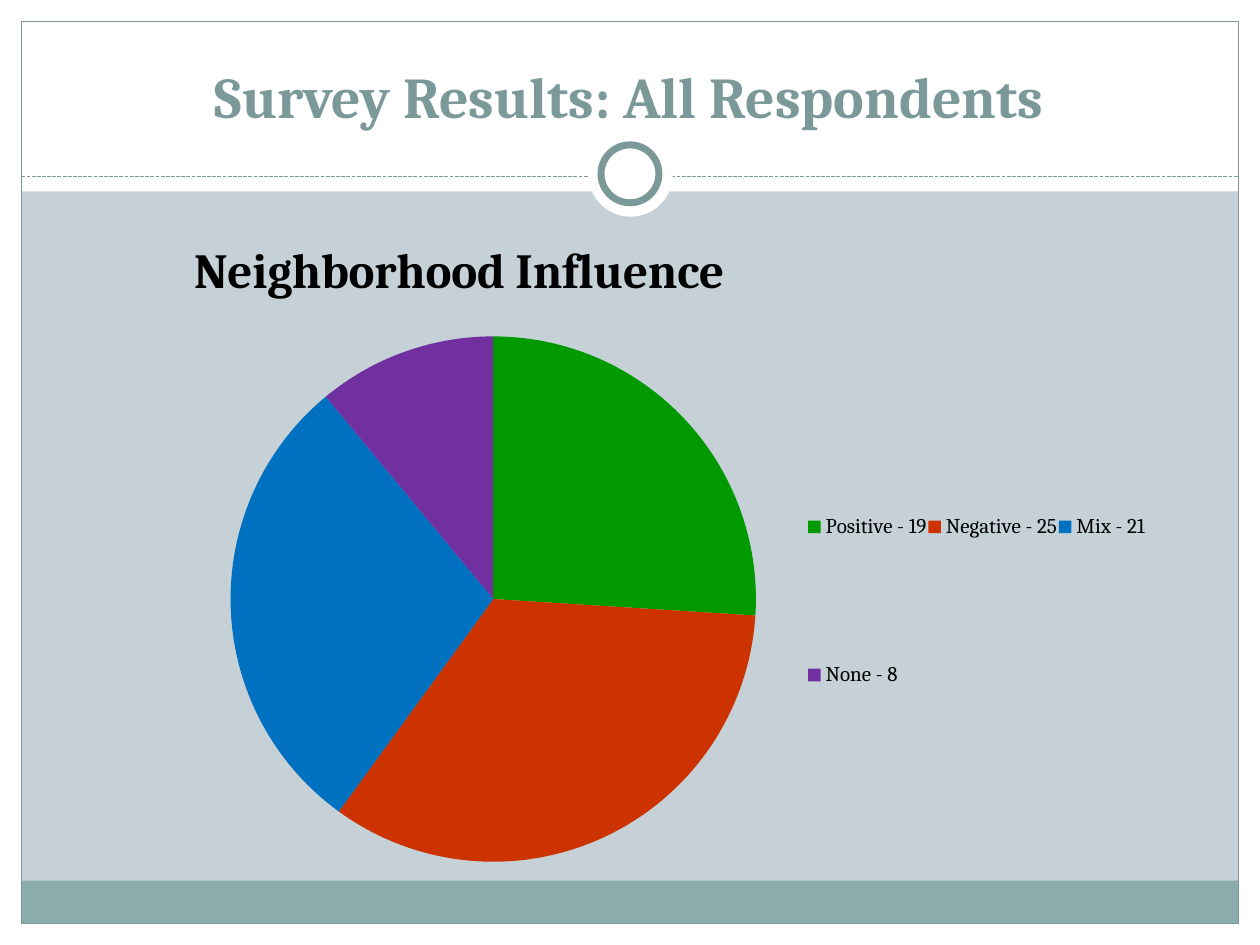
from lxml import etree
from pptx import Presentation, util as u
from pptx.chart.data import CategoryChartData
from pptx.dml.color import RGBColor
from pptx.enum import chart as ch, dml, shapes, text
from pptx.oxml.ns import qn

FONT = "Cambria"
TEAL = "7C999A"
CHART_W, CHART_H = 9.08, 5.47
rgb = RGBColor.from_string


def format_text(tf, content, size, color):
    """Fill a text frame with one bold line."""
    tf.text = content
    font = tf.paragraphs[0].runs[0].font
    font.name, font.size, font.bold = FONT, u.Pt(size), True
    font.color.rgb = rgb(color)


def place(parent, index, target=None, **inches):
    """Give a chart part a manual layout, in inches within the chart."""
    for old in parent.findall(qn("c:layout")):
        parent.remove(old)
    layout = etree.Element(qn("c:layout"))
    manual = etree.SubElement(layout, qn("c:manualLayout"))
    values = {"layoutTarget": target} if target else {}
    values.update(xMode="edge", yMode="edge")
    for tag, length in inches.items():
        values[tag] = length / (CHART_W if tag in "xw" else CHART_H)
    for tag, value in values.items():
        etree.SubElement(manual, qn("c:" + tag)).set("val", str(value))
    parent.insert(index, layout)


prs = Presentation()
prs.slide_width, prs.slide_height = u.Inches(10), u.Inches(7.5)
s = prs.slides.add_slide(prs.slide_layouts[5])
s.background.fill.solid()
s.background.fill.fore_color.rgb = rgb("C5D1D7")

# Frame, footer band and ring: kind, box, fill, line width
RECT, OVAL = shapes.MSO_SHAPE.RECTANGLE, shapes.MSO_SHAPE.OVAL
decor = [
    (RECT, (0, 7.33, 10, 0.17), "FFFFFF", 0),
    (RECT, (0, 0, 10, 1.52), "FFFFFF", 0),
    (RECT, (0, 0, 0.17, 7.5), "FFFFFF", 0),
    (RECT, (9.83, 0, 0.17, 7.5), "FFFFFF", 0),
    (RECT, (0.17, 6.99, 9.66, 0.34), "8CADAE", 0),
    (RECT, (0.17, 0.17, 9.66, 7.16), None, 0.75),
    ("line", (0.17, 1.4, 9.83, 1.4), None, 0.75),
    (OVAL, (4.67, 1.05, 0.67, 0.67), "FFFFFF", 0),
    (OVAL, (4.77, 1.15, 0.46, 0.46), "FFFFFF", 4),
]
for kind, box, fill, width in decor:
    box = [u.Inches(v) for v in box]
    if kind == "line":
        sp = s.shapes.add_connector(shapes.MSO_CONNECTOR.STRAIGHT, *box)
        sp.line.dash_style = dml.MSO_LINE.SQUARE_DOT
        etree.SubElement(sp._element.spPr, qn("a:effectLst"))
    else:
        sp = s.shapes.add_shape(kind, *box)
        sp.shadow.inherit = False
        if fill:
            sp.fill.solid()
            sp.fill.fore_color.rgb = rgb(fill)
        else:
            sp.fill.background()
    if width:
        sp.line.color.rgb = rgb(TEAL)
        sp.line.width = u.Pt(width)
    else:
        sp.line.fill.background()

# Title, brought in front of the white header
title = s.shapes.title
title.left, title.top = u.Inches(0.33), u.Inches(0.25)
title.width, title.height = u.Inches(9.33), u.Inches(0.83)
format_text(title.text_frame, "Survey Results: All Respondents", 33, TEAL)
title.text_frame.vertical_anchor = text.MSO_ANCHOR.BOTTOM
title.text_frame.paragraphs[0].alignment = text.PP_ALIGN.CENTER
s.shapes._spTree.append(title._element)

# Pie chart
data = CategoryChartData()
data.categories = ["Positive - 19", "Negative - 25", "Mix - 21", "None - 8"]
data.add_series("Series 1", [26, 34, 29, 11])
chart = s.shapes.add_chart(
    ch.XL_CHART_TYPE.PIE, u.Inches(0.42), u.Inches(1.75),
    u.Inches(CHART_W), u.Inches(CHART_H), data).chart
chart.font.name, chart.font.size = FONT, u.Pt(10)
chart.font.color.rgb = rgb("000000")
plot = chart.plots[0]
plot.vary_by_categories = True
for i, color in enumerate(["009900", "CC3300", "0070C0", "7030A0"]):
    fill = plot.series[0].points[i].format.fill
    fill.solid()
    fill.fore_color.rgb = rgb(color)

# Chart title and legend
chart.has_title = True
format_text(chart.chart_title.text_frame, "Neighborhood Influence", 28, "000000")
chart.chart_title.include_in_layout = False
chart.has_legend = True
legend = chart.legend
legend.position = ch.XL_LEGEND_POSITION.RIGHT
legend.include_in_layout = False
legend.font.name, legend.font.size = FONT, u.Pt(12)
legend.font.color.rgb = rgb("000000")

# Positions inside the chart
place(chart.chart_title._element, 1, x=1.05, y=0.08)
place(legend._element, 1, x=5.98, y=1.35, w=2.7, h=3.34)
place(plot._element.getparent(), 0, "inner", x=1.05, y=0.92, w=4.89, h=4.17)

prs.save("out.pptx")
